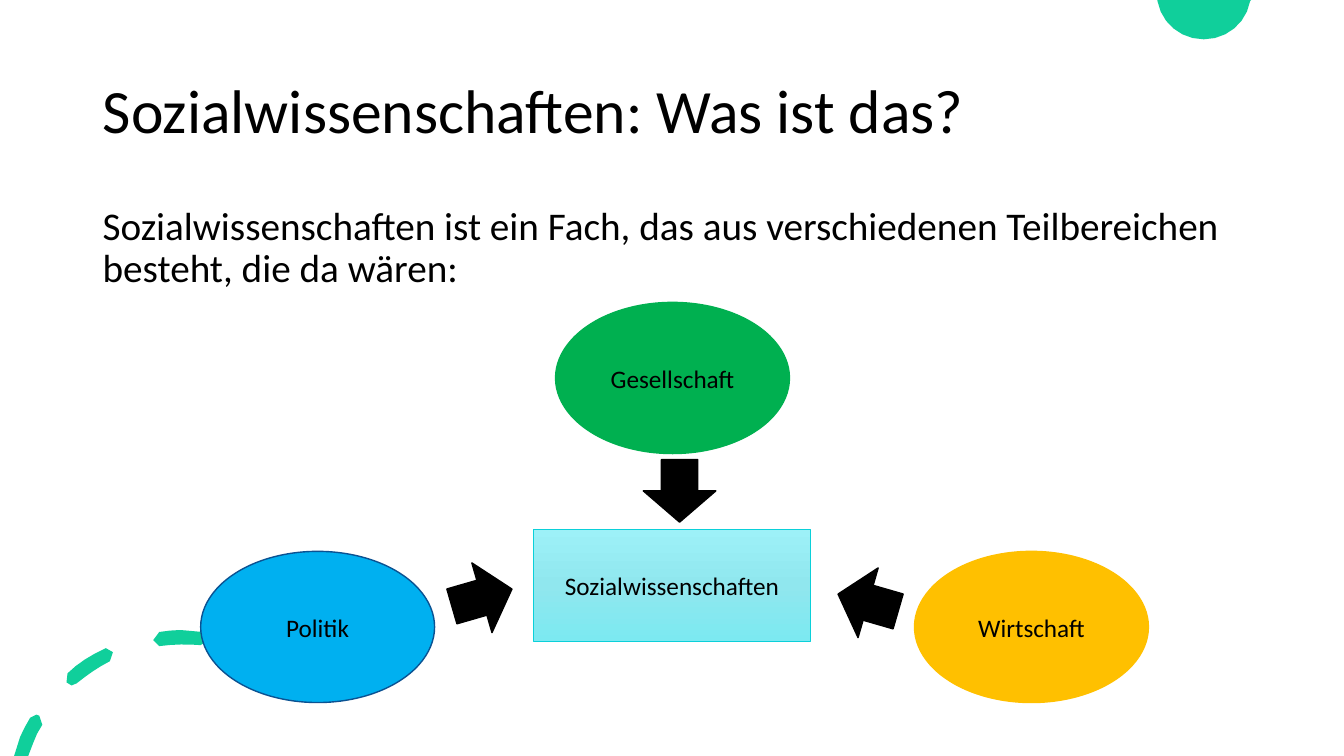
"""Build the slide that presents the three fields of social science."""
from copy import deepcopy
from dataclasses import dataclass
from math import dist

from pptx import Presentation
from pptx.dml.color import RGBColor
from pptx.enum.shapes import MSO_SHAPE
from pptx.enum.text import MSO_ANCHOR, MSO_AUTO_SIZE, PP_ALIGN
from pptx.oxml.ns import qn
from pptx.shapes.autoshape import Shape
from pptx.shapes.shapetree import SlideShapes
from pptx.slide import Slide
from pptx.text.text import TextFrame
from pptx.util import Pt

PX = 9144
FONT = "Calibri"
CHORD = 10
COLORS = {
    "text": "000000",
    "arrow": "000000",
    "accent": "10CF9B",
    "society": "00B050",
    "economy": "FFC000",
    "politics": "00B0F0",
    "politics_edge": "0B5292",
    "center_edge": "0BD0D9",
    "center_top": "9DF1F8",
    "center_middle": "90E7EE",
    "center_bottom": "7CE9F1",
}


@dataclass(frozen=True)
class Box:
    left: int
    top: int
    width: int
    height: int

    def emu(self) -> tuple[int, int, int, int]:
        return self.left * PX, self.top * PX, self.width * PX, self.height * PX


@dataclass(frozen=True)
class Field:
    label: str
    left: int
    top: int
    fill: str
    edge: str


@dataclass(frozen=True)
class Arrow:
    left: int
    top: int
    rotation: float


@dataclass(frozen=True)
class Contour:
    start: tuple[int, int]
    segments: tuple[tuple[int, ...], ...]


FIELDS = (
    Field("Gesellschaft", 551, 300, "society", "society"),
    Field("Wirtschaft", 907, 547, "economy", "economy"),
    Field("Politik", 199, 547, "politics", "politics_edge"),
)
ARROWS = (Arrow(447, 557, 343.9), Arrow(643, 451, 90), Arrow(830, 562, 196.1))
GRADIENT = ((0, "center_top"), (0.5, "center_middle"), (1, "center_bottom"))
CUT_CIRCLE = (
    Contour((1148, 0), ((1241, 0), (1240, 1), (1236, 23, 1217, 39, 1194, 39),
                        (1171, 39, 1152, 23, 1148, 1))),
)
DASHED_ARC = (
    Contour((36, 709), ((34, 708, 31, 710, 30, 712), (26, 718, 23, 725, 20, 731),
                        (14, 750), (28, 750), (33, 737),
                        (35, 731, 38, 725, 42, 719), (44, 716, 42, 711, 39, 710))),
    Contour((105, 643), ((103, 644), (90, 650, 77, 658, 67, 668),
                         (64, 670, 63, 675, 66, 677), (67, 679, 69, 680, 71, 680),
                         (73, 680, 74, 679, 76, 678), (86, 670, 97, 662, 109, 656),
                         (112, 654, 114, 650, 112, 647))),
    Contour((179, 625), ((172, 625, 165, 626, 158, 627), (154, 627, 151, 631, 152, 635),
                         (152, 638, 155, 641, 158, 641),
                         (173, 639, 186, 639, 199, 640), (203, 641, 207, 638, 207, 635),
                         (208, 631, 205, 627, 201, 627))),
)


def rgb(name: str) -> RGBColor:
    return RGBColor.from_string(COLORS[name])


def trace(contour: Contour) -> list[tuple[int, int]]:
    """Return the contour in EMU, its curves cut into chords of about equal length."""
    points = [contour.start]
    for segment in contour.segments:
        if len(segment) == 2:
            points.append(segment)
            continue
        knots = (points[-1], segment[:2], segment[2:4], segment[4:])
        steps = max(1, round(dist(knots[0], knots[3]) / CHORD))
        for step in range(1, steps + 1):
            t = step / steps
            weights = ((1 - t) ** 3, 3 * t * (1 - t) ** 2, 3 * t * t * (1 - t), t ** 3)
            points.append(tuple(sum(w * k[axis] for w, k in zip(weights, knots))
                                for axis in (0, 1)))
    return [(round(x * PX), round(y * PX)) for x, y in points]


def paint(shape: Shape, fill: str) -> None:
    shape.shadow.inherit = False
    shape.fill.solid()
    shape.fill.fore_color.rgb = rgb(fill)


def outline(shape: Shape, color: str, width: float) -> None:
    shape.line.color.rgb = rgb(color)
    shape.line.width = Pt(width)


def write(frame: TextFrame, text: str, size: int, align: PP_ALIGN,
          anchor: MSO_ANCHOR, spacing: float = 1.0) -> None:
    frame.word_wrap = True
    frame.auto_size = MSO_AUTO_SIZE.NONE
    frame.vertical_anchor = anchor
    paragraph = frame.paragraphs[0]
    paragraph.alignment = align
    paragraph.line_spacing = spacing
    run = paragraph.add_run()
    run.text = text
    run.font.name = FONT
    run.font.size = Pt(size)
    run.font.color.rgb = rgb("text")


def add_ornament(shapes: SlideShapes, contours: tuple[Contour, ...]) -> None:
    first, *others = [trace(contour) for contour in contours]
    builder = shapes.build_freeform(*first[0])
    builder.add_line_segments(first[1:], close=True)
    for points in others:
        builder.move_to(*points[0])
        builder.add_line_segments(points[1:], close=True)
    ornament = builder.convert_to_shape()
    paint(ornament, "accent")
    ornament.line.fill.background()


def add_headline(slide: Slide) -> None:
    title = slide.shapes.title
    title.left, title.top, title.width, title.height = Box(92, 40, 1150, 145).emu()
    write(title.text_frame, "Sozialwissenschaften: Was ist das?", 44,
          PP_ALIGN.LEFT, MSO_ANCHOR.MIDDLE, 0.9)
    intro = slide.shapes.add_textbox(*Box(92, 200, 1150, 422).emu())
    write(intro.text_frame,
          "Sozialwissenschaften ist ein Fach, das aus verschiedenen "
          "Teilbereichen besteht, die da wären:",
          28, PP_ALIGN.LEFT, MSO_ANCHOR.TOP, 0.9)


def add_center(shapes: SlideShapes) -> None:
    center = shapes.add_shape(MSO_SHAPE.RECTANGLE, *Box(529, 525, 275, 111).emu())
    center.shadow.inherit = False
    center.fill.gradient()
    center.fill.gradient_angle = 270
    top_stop = next(center.element.spPr.iter(qn("a:gs")))
    top_stop.addnext(deepcopy(top_stop))
    for stop, (position, color) in zip(center.fill.gradient_stops, GRADIENT):
        stop.position = position
        stop.color.rgb = rgb(color)
    outline(center, "center_edge", 0.5)
    write(center.text_frame, "Sozialwissenschaften", 18, PP_ALIGN.CENTER, MSO_ANCHOR.MIDDLE)


def add_field(shapes: SlideShapes, field: Field) -> None:
    ellipse = shapes.add_shape(MSO_SHAPE.OVAL, *Box(field.left, field.top, 232, 150).emu())
    paint(ellipse, field.fill)
    outline(ellipse, field.edge, 1)
    write(ellipse.text_frame, field.label, 18, PP_ALIGN.CENTER, MSO_ANCHOR.MIDDLE)


def add_arrow(shapes: SlideShapes, arrow: Arrow) -> None:
    pointer = shapes.add_shape(MSO_SHAPE.RIGHT_ARROW, *Box(arrow.left, arrow.top, 62, 72).emu())
    pointer.rotation = arrow.rotation
    paint(pointer, "arrow")
    outline(pointer, "arrow", 1)


def main() -> None:
    deck = Presentation()
    deck.slide_width, deck.slide_height = 1333 * PX, 750 * PX
    slide = deck.slides.add_slide(deck.slide_layouts.get_by_name("Title Only"))
    for contours in (CUT_CIRCLE, DASHED_ARC):
        add_ornament(slide.shapes, contours)
    add_headline(slide)
    add_center(slide.shapes)
    for field in FIELDS:
        add_field(slide.shapes, field)
    for arrow in ARROWS:
        add_arrow(slide.shapes, arrow)
    deck.save("out.pptx")


if __name__ == "__main__":
    main()
